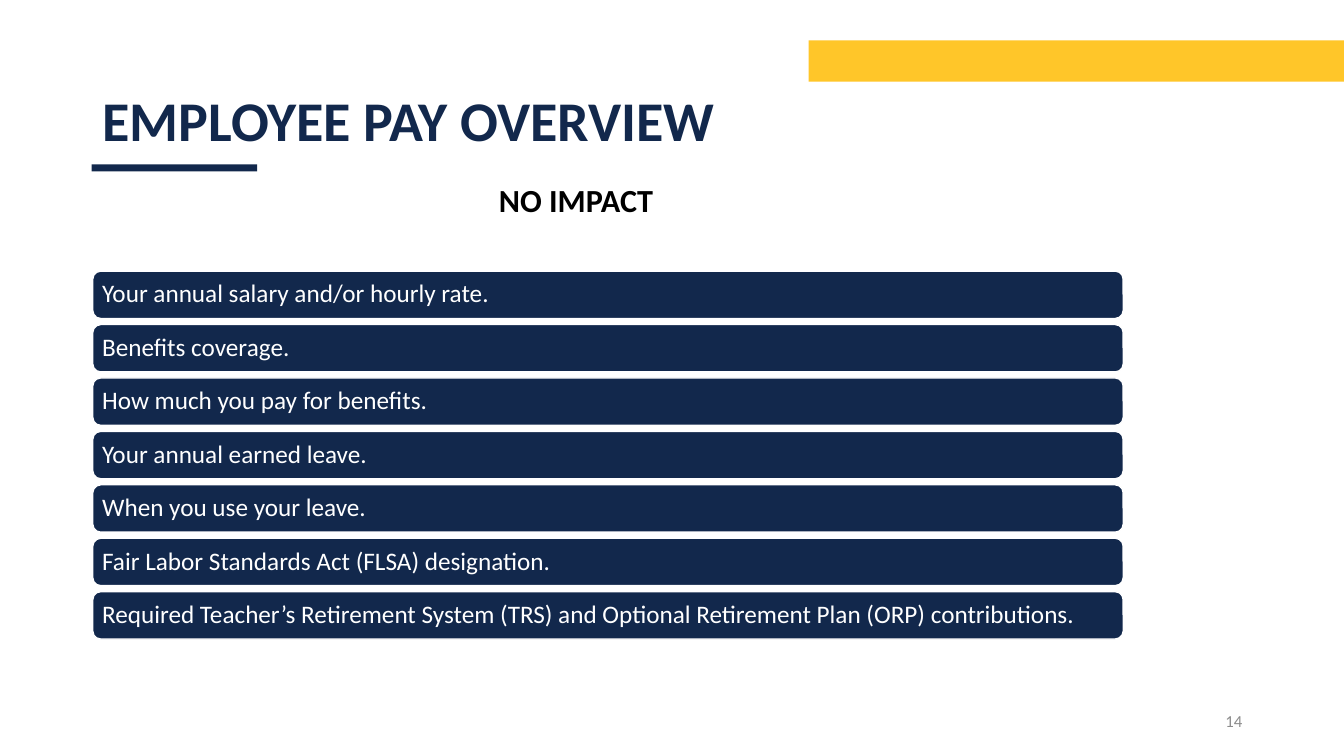
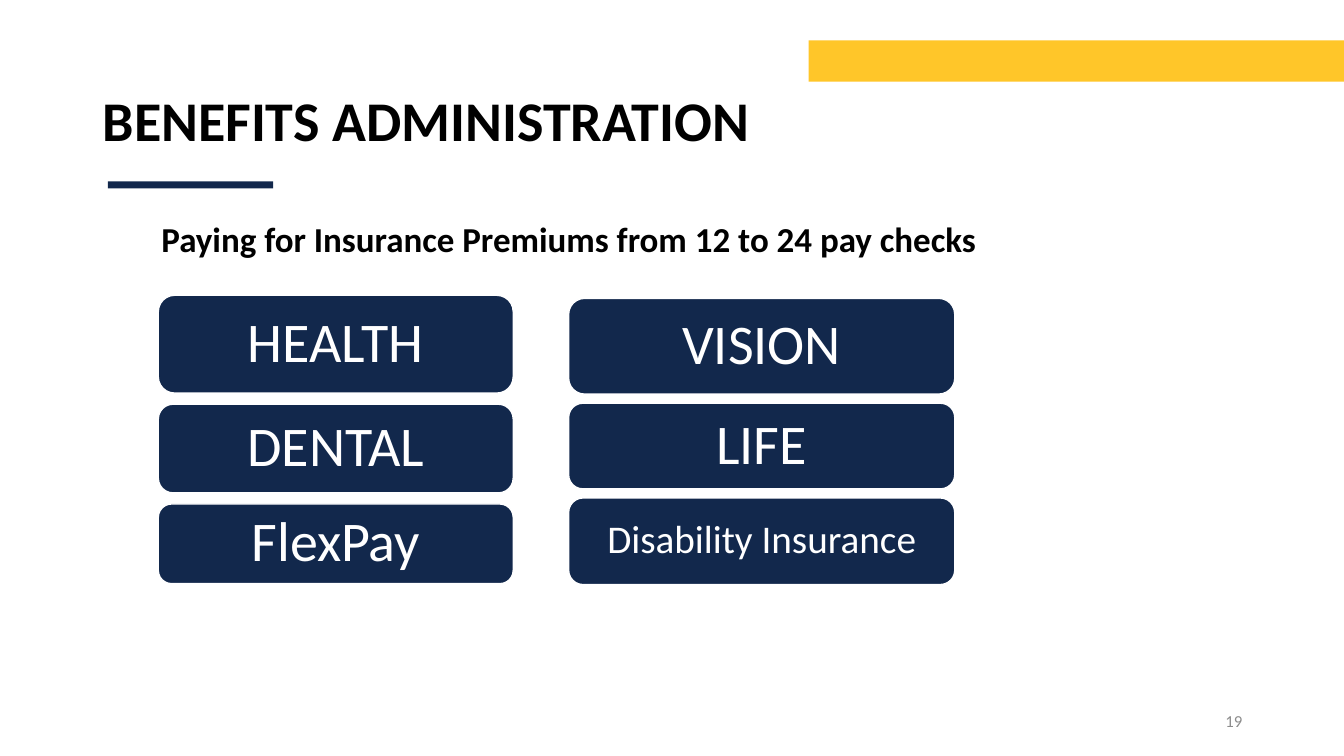
from pptx import Presentation
from pptx.dml.color import RGBColor
from pptx.enum.shapes import MSO_SHAPE as Shape
from pptx.enum.text import MSO_ANCHOR as Anchor, PP_ALIGN as Align
from pptx.util import Inches, Pt

NAVY = RGBColor(0x12, 0x28, 0x4C)
GOLD = RGBColor(0xFF, 0xC6, 0x29)
GRAY = RGBColor(0x8C, 0x8C, 0x8C)
BLACK = RGBColor(0, 0, 0)
WHITE = RGBColor(255, 255, 255)
FONT = "Calibri"

NO_IMPACT_ITEMS = [
    "Your annual salary and/or hourly rate.",
    "Benefits coverage.",
    "How much you pay for benefits.",
    "Your annual earned leave.",
    "When you use your leave.",
    "Fair Labor Standards Act (FLSA) designation.",
    "Required Teacher’s Retirement System (TRS) and Optional Retirement Plan (ORP) contributions.",
]
# Each card: text, height, text size, inset
LEFT_CARDS = [
    ("HEALTH", 0.97, 40, 0.17),
    ("DENTAL", 0.88, 40, 0.17),
    ("FlexPay", 0.79, 40, 0.17),
]
RIGHT_CARDS = [
    ("VISION", 0.95, 40, 0.17),
    ("LIFE", 0.85, 40, 0.17),
    ("Disability Insurance", 0.86, 28, 0.12),
]


def write(shape, text, size, color=BLACK, bold=False, align=Align.LEFT,
          spacing=0.9, inset=None):
    frame = shape.text_frame
    frame.word_wrap = True
    frame.vertical_anchor = Anchor.MIDDLE
    if inset is not None:
        frame.margin_left = frame.margin_right = Inches(inset)
        frame.margin_top = frame.margin_bottom = Inches(inset)
    para = frame.paragraphs[0]
    para.alignment = align
    para.line_spacing = spacing
    span = para.add_run()
    span.text = text
    span.font.name = FONT
    span.font.size = Pt(size)
    span.font.bold = bold
    span.font.color.rgb = color


def add_text(page, box, text, size, **style):
    shape = page.shapes.add_textbox(*map(Inches, box))
    write(shape, text, size, **style)


def add_block(page, box, fill, kind=Shape.RECTANGLE):
    block = page.shapes.add_shape(kind, *map(Inches, box))
    block.shadow.inherit = False
    block.fill.solid()
    block.fill.fore_color.rgb = fill
    block.line.fill.background()
    return block


def add_card(page, box, text, size, inset, align):
    card = add_block(page, box, NAVY, Shape.ROUNDED_RECTANGLE)
    card.line.color.rgb = WHITE
    card.line.width = Pt(1)
    write(card, text, size, color=WHITE, align=align, inset=inset)


def add_stack(page, left, top, width, gap, cards, align=Align.CENTER):
    """Stack cards downwards, with an equal gap between them."""
    for text, height, size, inset in cards:
        add_card(page, (left, top, width, height), text, size, inset, align)
        top += height + gap


def add_page(deck, title, number, title_color, rule_at):
    """Add a page with its gold band, title, title rule and page number."""
    page = deck.slides.add_slide(deck.slide_layouts[6])
    add_block(page, (8.02, 0.4, 5.31, 0.41), GOLD)
    add_text(page, (0.92, 0.5, 11.5, 1.45), title, 40, color=title_color, bold=True)
    add_block(page, (*rule_at, 1.64, 0.07), NAVY)
    add_text(page, (9.42, 6.95, 3, 0.4), str(number), 12, color=GRAY,
             align=Align.RIGHT, spacing=1.0)
    return page


def add_pay_overview(deck):
    page = add_page(deck, "EMPLOYEE PAY OVERVIEW", 14, NAVY, (0.91, 1.63))
    add_text(page, (0.86, 1.56, 9.71, 0.89), "NO IMPACT", 23, bold=True,
             align=Align.CENTER)
    bars = [(item, 0.47, 18, 0.07) for item in NO_IMPACT_ITEMS]
    add_stack(page, 0.92, 2.69, 10.22, 0.06, bars, Align.LEFT)


def add_benefits(deck):
    page = add_page(deck, "BENEFITS ADMINISTRATION", 19, BLACK, (1.07, 1.8))
    add_text(page, (0.5, 2.08, 10.28, 0.63),
             "Paying for Insurance Premiums from 12 to 24 pay checks", 25,
             bold=True, align=Align.CENTER)
    add_stack(page, 1.57, 2.93, 3.52, 0.11, LEFT_CARDS)
    add_stack(page, 5.64, 2.96, 3.83, 0.09, RIGHT_CARDS)


def main():
    deck = Presentation()
    deck.slide_width = Inches(13.33)
    deck.slide_height = Inches(7.5)
    add_pay_overview(deck)
    add_benefits(deck)
    deck.save("out.pptx")


if __name__ == "__main__":
    main()
